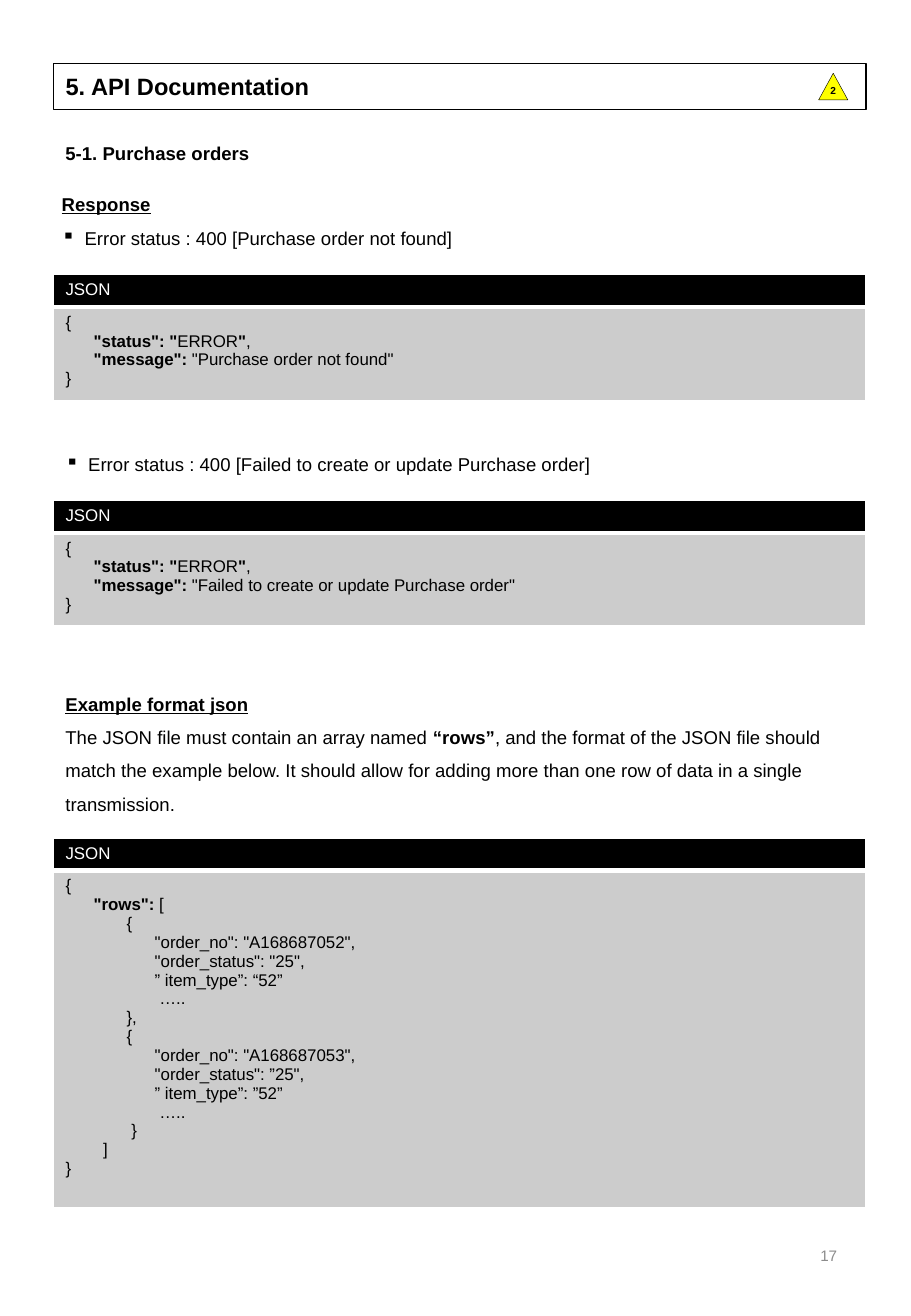
import pptx
import pptx.dml.color
import pptx.enum.shapes
import pptx.enum.text
import pptx.oxml
import pptx.oxml.ns
import pptx.util
from pptx.util import Pt

BLACK = pptx.dml.color.RGBColor(0x00, 0x00, 0x00)
WHITE = pptx.dml.color.RGBColor(0xFF, 0xFF, 0xFF)
CODE_GRAY = pptx.dml.color.RGBColor(0xCC, 0xCC, 0xCC)
NUMBER_GRAY = pptx.dml.color.RGBColor(0x8C, 0x8C, 0x8C)
YELLOW = pptx.dml.color.RGBColor(0xFF, 0xFF, 0x00)
FONT = "Arial"
LEFT, WIDTH = 31.7, 481.7
CODE_HEADER_HEIGHT = 19.2
SPACE_WIDTH = 2.78
BULLET_INDENT = 13.5

ROWS_EXAMPLE = [
    (0, "{"),
    (6, '**"rows": **['),
    (13, "{"),
    (19, '"order_no": "A168687052",'),
    (19, '"order_status": "25",'),
    (19, "” item_type”: “52”"),
    (20, "….."),
    (13, "},"),
    (13, "{"),
    (19, '"order_no": "A168687053",'),
    (19, '"order_status": ”25",'),
    (19, "” item_type”: ”52”"),
    (20, "….."),
    (14, "}"),
    (8, "]"),
    (0, "}"),
]


def error_lines(message):
    return [
        (0, "{"),
        (6, '**"status": "**ERROR**"**,'),
        (6, f'**"message": **"{message}"'),
        (0, "}"),
    ]


def write(paragraph, text, size, color=BLACK, underline=False):
    """Fill a paragraph; text between pairs of ** is bold."""
    for index, part in enumerate(text.split("**")):
        if part:
            run = paragraph.add_run()
            run.text = part
            run.font.name = FONT
            run.font.size = Pt(size)
            run.font.bold = index % 2 == 1
            run.font.underline = underline
            run.font.color.rgb = color


def set_indent(paragraph, margin, first_line=0):
    properties = paragraph._p.get_or_add_pPr()
    properties.set("marL", str(Pt(margin)))
    properties.set("indent", str(Pt(first_line)))
    return properties


def add_bullet(paragraph):
    properties = set_indent(paragraph, BULLET_INDENT, -BULLET_INDENT)
    pptx.oxml.ns.qn("a:buChar")
    bullet = pptx.oxml.parse_xml(
        f'<a:buChar {pptx.oxml.ns.nsdecls("a")} char="▪"/>')
    properties.append(bullet)


def add_text_frame(slide, left, top, width, height):
    frame = slide.shapes.add_textbox(
        Pt(left), Pt(top), Pt(width), Pt(height)).text_frame
    frame.word_wrap = True
    return frame


def add_text_block(slide, left, top, height, heading=None, bullet=None, body=None):
    """Place an underlined heading, a bullet line and body text, as given."""
    frame = add_text_frame(slide, left, top, WIDTH, height)
    paragraph = None
    for text, kind in ((heading, "heading"), (bullet, "bullet"), (body, "body")):
        if text is None:
            continue
        paragraph = frame.add_paragraph() if paragraph else frame.paragraphs[0]
        paragraph.line_spacing = 1.5
        if kind == "bullet":
            add_bullet(paragraph)
        write(paragraph, text, 11, underline=kind == "heading")


def set_borders(cell, top, bottom):
    properties = cell._tc.get_or_add_tcPr()
    sides = (("lnL", 1), ("lnR", 1), ("lnT", top), ("lnB", bottom))
    for position, (side, width) in enumerate(sides):
        properties.insert(position, pptx.oxml.parse_xml(
            f'<a:{side} {pptx.oxml.ns.nsdecls("a")} w="{Pt(width)}">'
            f'<a:solidFill><a:srgbClr val="{WHITE}"/></a:solidFill></a:{side}>'))


def add_code_table(slide, top, height, lines):
    table = slide.shapes.add_table(
        2, 1, Pt(LEFT), Pt(top), Pt(WIDTH), Pt(height)).table
    table.first_row = table.horz_banding = False
    table.rows[0].height = Pt(CODE_HEADER_HEIGHT)
    table.rows[1].height = Pt(height - CODE_HEADER_HEIGHT)
    header, body = table.cell(0, 0), table.cell(1, 0)
    for cell, color, borders in ((header, BLACK, (1, 3)), (body, CODE_GRAY, (3, 1))):
        cell.fill.solid()
        cell.fill.fore_color.rgb = color
        set_borders(cell, *borders)
    write(header.text_frame.paragraphs[0], "JSON", 10, WHITE)
    for index, (spaces, text) in enumerate(lines):
        frame = body.text_frame
        paragraph = frame.add_paragraph() if index else frame.paragraphs[0]
        set_indent(paragraph, spaces * SPACE_WIDTH)
        write(paragraph, text, 10)


def add_revision_mark(slide, left, top, width, height, number):
    mark = slide.shapes.add_shape(
        pptx.enum.shapes.MSO_SHAPE.ISOSCELES_TRIANGLE,
        Pt(left), Pt(top), Pt(width), Pt(height))
    mark.shadow.inherit = False
    mark.fill.solid()
    mark.fill.fore_color.rgb = YELLOW
    mark.line.color.rgb = BLACK
    mark.line.width = Pt(0.25)
    frame = mark.text_frame
    frame.margin_top, frame.margin_bottom = Pt(0), Pt(3.6)
    frame.word_wrap = False
    frame.vertical_anchor = pptx.enum.text.MSO_ANCHOR.MIDDLE
    frame.paragraphs[0].alignment = pptx.enum.text.PP_ALIGN.CENTER
    write(frame.paragraphs[0], f"**{number}**", 6)


def add_title_bar(slide, top, height):
    title = slide.shapes.title
    title.left, title.top = Pt(LEFT), Pt(top)
    title.width, title.height = Pt(WIDTH), Pt(height)
    title.line.color.rgb = BLACK
    title.line.width = Pt(1)
    frame = title.text_frame
    frame.auto_size = pptx.enum.text.MSO_AUTO_SIZE.NONE
    frame.vertical_anchor = pptx.enum.text.MSO_ANCHOR.MIDDLE
    frame.paragraphs[0].alignment = pptx.enum.text.PP_ALIGN.LEFT
    write(frame.paragraphs[0], "**5. API Documentation**", 14)
    add_revision_mark(slide, LEFT + WIDTH - 28.1, top + 5.8, 17.3, 15.8, 2)


def add_page_number(slide, left, top, width, height):
    frame = add_text_frame(slide, left, top, width, height)
    frame.vertical_anchor = pptx.enum.text.MSO_ANCHOR.MIDDLE
    frame.paragraphs[0].alignment = pptx.enum.text.PP_ALIGN.RIGHT
    write(frame.paragraphs[0], "17", 9, NUMBER_GRAY)


def main():
    presentation = pptx.Presentation()
    presentation.slide_width, presentation.slide_height = Pt(540), Pt(780)
    slide = presentation.slides.add_slide(presentation.slide_layouts[5])

    add_title_bar(slide, 37.6, 27.4)
    section = add_text_frame(slide, LEFT, 80.6, WIDTH, 20.9)
    write(section.paragraphs[0], "**5-1. Purchase orders**", 11)

    add_text_block(slide, 29.5, 104.4, 44.6, heading="**Response**",
                   bullet="Error status : 400 [Purchase order not found]")
    add_code_table(slide, 162.7, 74.2, error_lines("Purchase order not found"))

    add_text_block(
        slide, LEFT, 258.5, 44.6,
        bullet="Error status : 400 [Failed to create or update Purchase order]")
    add_code_table(slide, 296.6, 74.2,
                   error_lines("Failed to create or update Purchase order"))

    add_text_block(
        slide, LEFT, 400.3, 85, heading="**Example format json**",
        body="The JSON file must contain an array named **“rows”**, and the "
             "format of the JSON file should match the example below. It should "
             "allow for adding more than one row of data in a single transmission.")
    add_code_table(slide, 496.8, 218.2, ROWS_EXAMPLE)
    add_page_number(slide, 381.6, 722.9, 121.7, 41.8)
    presentation.save("out.pptx")


if __name__ == "__main__":
    main()
